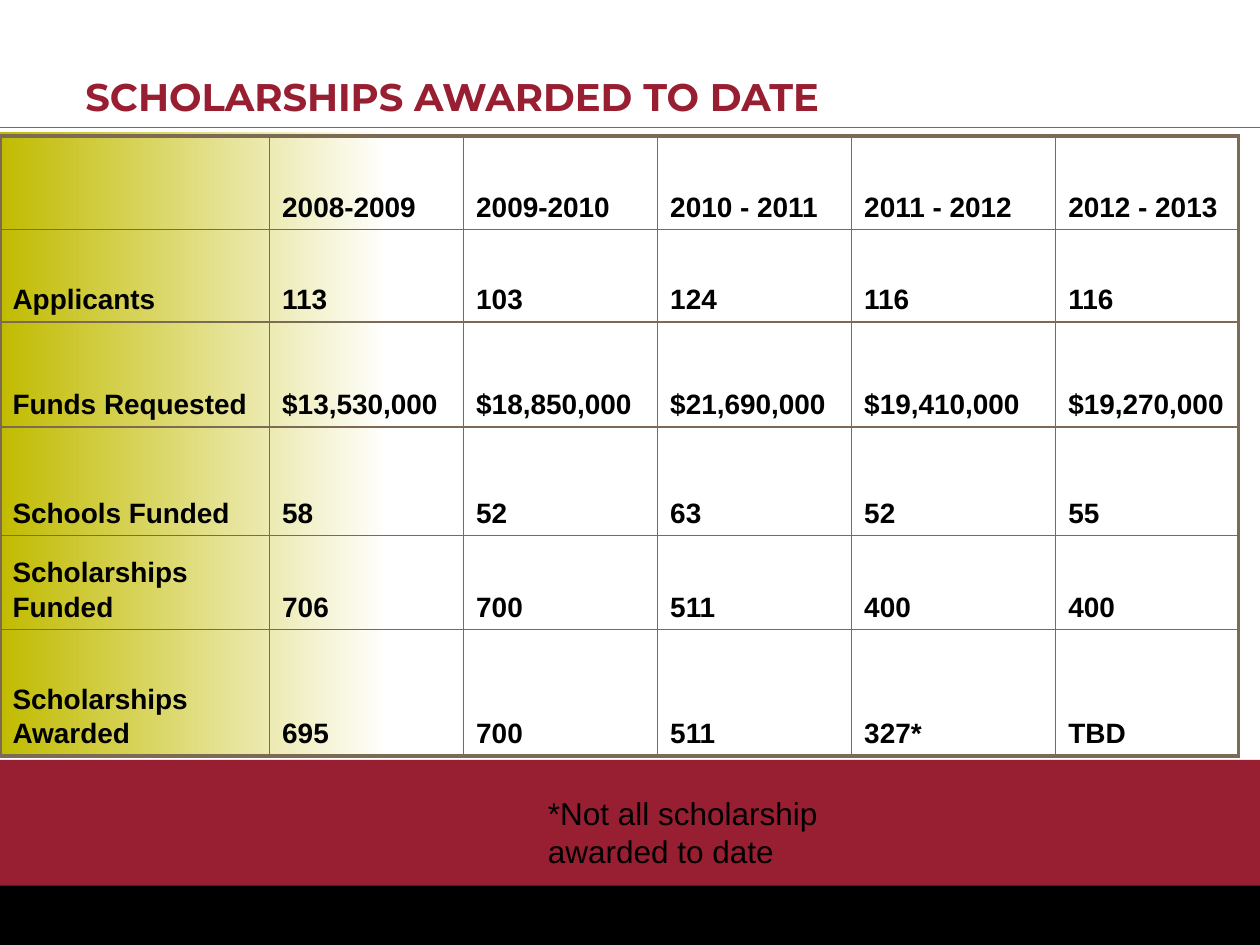
from lxml import etree
from pptx import Presentation
from pptx import util as u
from pptx.dml.color import RGBColor
from pptx.enum import shapes, text
from pptx.oxml import ns

WIDTH, HEIGHT = 10, 7.5
COLORS = {"crimson": "981E32", "olive": "C1BB00", "white": "FFFFFF",
          "black": "000000", "brown": "7C6A55"}
TITLE_FONT = {"name": "Montserrat", "size": u.Pt(22), "bold": True}
CELL_FONT = {"name": "Arial", "size": u.Pt(16), "bold": True}
NOTE_FONT = {"name": "Arial", "size": u.Pt(18), "bold": False}
COLUMNS = [2.14, 1.54, 1.54, 1.54, 1.62, 1.45]
ROWS = [0.74, 0.73, 0.83, 0.86, 0.74, 1]
AWARDS = [
    ["", "2008-2009", "2009-2010", "2010 - 2011", "2011 - 2012", "2012 - 2013"],
    ["Applicants", "113", "103", "124", "116", "116"],
    ["Funds Requested", "$13,530,000", "$18,850,000", "$21,690,000",
     "$19,410,000", "$19,270,000"],
    ["Schools Funded", "58", "52", "63", "52", "55"],
    ["Scholarships Funded", "706", "700", "511", "400", "400"],
    ["Scholarships Awarded", "695", "700", "511", "327*", "TBD"],
]


def rgb(name):
    return RGBColor.from_string(COLORS[name])


def inches(box):
    return [u.Inches(length) for length in box]


def write(frame, words, font, color, spacing=1.0):
    paragraph = frame.paragraphs[0]
    paragraph.line_spacing = spacing
    run = paragraph.add_run()
    run.text = words
    for key, value in font.items():
        setattr(run.font, key, value)
    run.font.color.rgb = rgb(color)


def add_band(slide, box, color, fade=None):
    shape = slide.shapes.add_shape(shapes.MSO_SHAPE.RECTANGLE, *inches(box))
    shape.shadow.inherit = False
    shape.line.fill.background()
    if fade:
        shape.fill.gradient()
        shape.fill.gradient_angle = 0
        for stop, name, position in zip(shape.fill.gradient_stops, (color, fade), (0, 1)):
            stop.color.rgb = rgb(name)
            stop.position = position
    else:
        shape.fill.solid()
        shape.fill.fore_color.rgb = rgb(color)


def add_backdrop(slide, box):
    left, top, width, height = box
    add_band(slide, (left, top + 0.14 * height, 0.308 * width, 0.66 * height),
             "olive", "white")
    add_band(slide, (left, top + 6.03, width, 1.01), "crimson")
    add_band(slide, (left, top + 7.03, width, 0.47), "black")
    rule_y = top + 1.01
    rule = slide.shapes.add_connector(
        shapes.MSO_CONNECTOR.STRAIGHT, *inches((left, rule_y, left + width, rule_y)))
    rule.line.color.rgb = rgb("brown")
    rule.line.width = u.Pt(0.5)
    etree.SubElement(rule._element.spPr, ns.qn("a:effectLst"))


def add_text(slide, box, words, font, color, anchor, spacing=1.0):
    frame = slide.shapes.add_textbox(*inches(box)).text_frame
    frame.word_wrap = True
    frame.vertical_anchor = anchor
    write(frame, words, font, color, spacing)


def set_borders(cell, widths):
    properties = cell._tc.get_or_add_tcPr()
    for index, (side, width) in enumerate(widths.items()):
        line = etree.Element(ns.qn(f"a:ln{side}"), w=str(u.Pt(width)))
        fill = etree.SubElement(line, ns.qn("a:solidFill"))
        etree.SubElement(fill, ns.qn("a:srgbClr"), val=COLORS["brown"])
        properties.insert(index, line)


def add_awards_table(slide, box):
    table = slide.shapes.add_table(len(ROWS), len(COLUMNS), *inches(box)).table
    table.first_row = table.horz_banding = False
    for column, width in zip(table.columns, COLUMNS):
        column.width = u.Inches(box[2] * width / sum(COLUMNS))
    for row, height in zip(table.rows, ROWS):
        row.height = u.Inches(box[3] * height / sum(ROWS))
    last_row, last_column = len(ROWS) - 1, len(COLUMNS) - 1
    for r, values in enumerate(AWARDS):
        for c, value in enumerate(values):
            cell = table.cell(r, c)
            cell.fill.background()
            cell.vertical_anchor = text.MSO_ANCHOR.BOTTOM
            if value:
                write(cell.text_frame, value, CELL_FONT, "black", 1.1)
            outer = {"L": c == 0, "R": c == last_column, "T": r == 0, "B": r == last_row}
            set_borders(cell, {side: 2.25 if edge else 1 for side, edge in outer.items()})


def build_slide(presentation):
    slide = presentation.slides.add_slide(presentation.slide_layouts[6])
    add_backdrop(slide, (0, 0, WIDTH, HEIGHT))
    add_text(slide, (0.58, 0.25, 6.44, 0.74), "SCHOLARSHIPS AWARDED TO DATE",
             TITLE_FONT, "crimson", text.MSO_ANCHOR.BOTTOM, 0.8)
    add_awards_table(slide, (0, 1.08, 9.83, 4.92))
    add_text(slide, (4.25, 6.25, 3.08, 0.71), "*Not all scholarship awarded to date",
             NOTE_FONT, "black", text.MSO_ANCHOR.TOP)


def main():
    presentation = Presentation()
    presentation.slide_width = u.Inches(WIDTH)
    presentation.slide_height = u.Inches(HEIGHT)
    build_slide(presentation)
    presentation.save("out.pptx")


if __name__ == "__main__":
    main()
